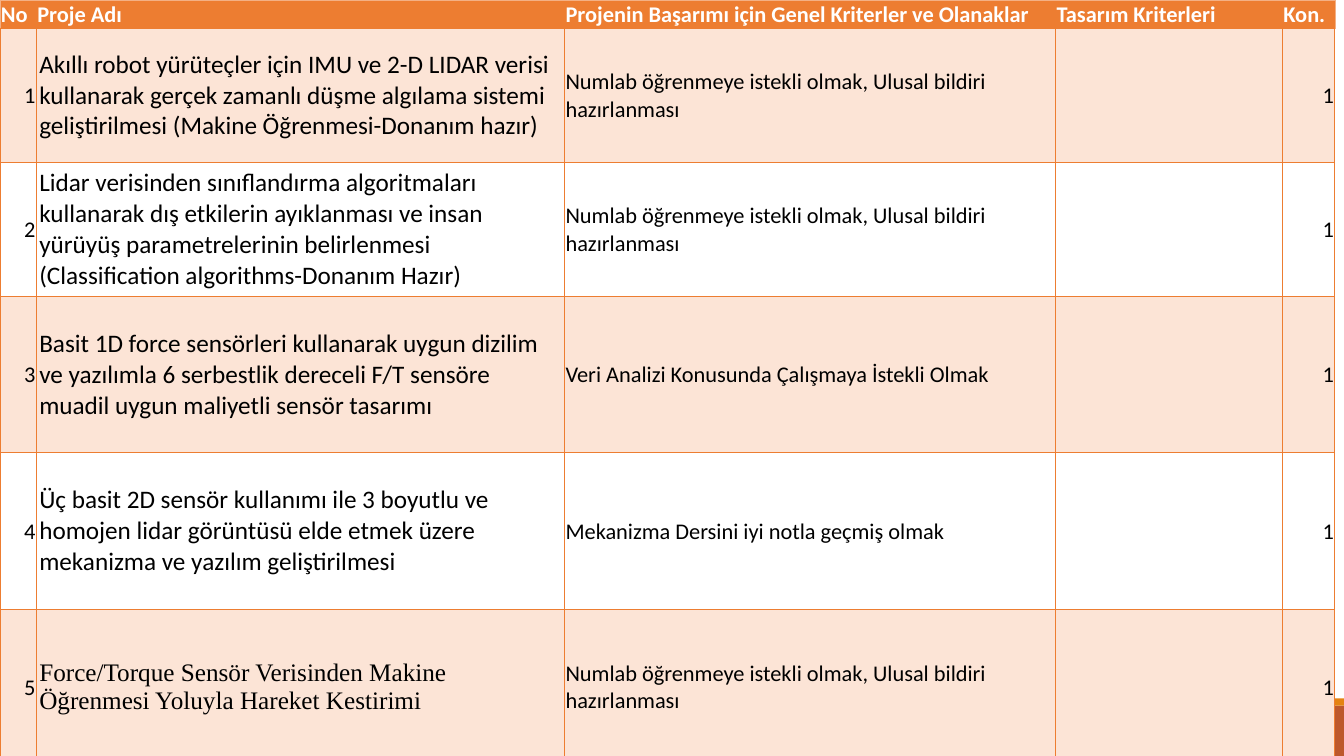
from dataclasses import dataclass

from lxml.etree import SubElement
from pptx import Presentation
from pptx.dml.color import RGBColor as RGB
from pptx.enum.shapes import MSO_SHAPE as SHAPE
from pptx.enum.text import MSO_ANCHOR as ANCHOR, PP_ALIGN as ALIGN
from pptx.oxml.ns import qn
from pptx.util import Inches, Pt


@dataclass(frozen=True)
class Theme:
    header: str = "ED7D31"
    header_edge: str = "F4B084"
    band: str = "FCE4D6"
    footer: str = "BD582C"
    footer_edge: str = "E48312"
    light: str = "FFFFFF"
    dark: str = "000000"
    font: str = "Calibri"
    serif: str = "Times New Roman"
    text_size: float = 16
    name_size: float = 18
    thin: float = 0.5
    thick: float = 1


THEME = Theme()
WIDTH, HEIGHT = 13.33, 7.5
COLUMNS = [0.36, 5.24, 4.87, 2.25, 0.52]
ROWS = [0.2] + [1.33] * 2 + [1.55] * 3
NAME_COL, COUNT_COL = 1, 4
NUMBER_COLS = (0, COUNT_COL)
TIGHT = (0.01, 0.01, 0.01, 0)
ROOMY = (0.03, 0.02, 0.03, 0.02)

HEADINGS = ["No", "Proje Adı", "Projenin Başarımı için Genel Kriterler ve Olanaklar",
            "Tasarım Kriterleri", "Kon."]
SOFTWARE = "Numlab öğrenmeye istekli olmak, Ulusal bildiri hazırlanması"
PROJECTS = [
    ("Akıllı robot yürüteçler için IMU ve 2-D LIDAR verisi kullanarak gerçek zamanlı "
     "düşme algılama sistemi geliştirilmesi (Makine Öğrenmesi-Donanım hazır)", SOFTWARE),
    ("Lidar verisinden sınıflandırma algoritmaları kullanarak dış etkilerin ayıklanması "
     "ve insan yürüyüş parametrelerinin belirlenmesi "
     "(Classification algorithms-Donanım Hazır)", SOFTWARE),
    ("Basit 1D force sensörleri kullanarak uygun dizilim ve yazılımla 6 serbestlik "
     "dereceli F/T sensöre muadil uygun maliyetli sensör tasarımı",
     "Veri Analizi Konusunda Çalışmaya İstekli Olmak"),
    ("Üç basit 2D sensör kullanımı ile 3 boyutlu ve homojen lidar görüntüsü elde etmek "
     "üzere mekanizma ve yazılım geliştirilmesi",
     "Mekanizma Dersini iyi notla geçmiş olmak"),
    ("Force/Torque Sensör Verisinden Makine Öğrenmesi Yoluyla Hareket Kestirimi", SOFTWARE),
]


def set_borders(cell, borders):
    """Draw the four cell edges; an edge given as None stays clear."""
    tcPr = cell._tc.get_or_add_tcPr()
    for side in "LRTB":
        ln = SubElement(tcPr, qn(f"a:ln{side}"))
        if borders[side] is None:
            SubElement(ln, qn("a:noFill"))
            continue
        color, width = borders[side]
        ln.set("w", str(Pt(width)))
        fill = SubElement(ln, qn("a:solidFill"))
        SubElement(fill, qn("a:srgbClr"), val=color)


def cell_borders(row, col):
    """Pale outline around the header, heavier outline around the body."""
    thin, thick = (THEME.header, THEME.thin), (THEME.header, THEME.thick)
    first, last = col == 0, col == len(COLUMNS) - 1
    if row == 0:
        pale = (THEME.header_edge, THEME.thin)
        return {"L": pale if first else None, "R": pale if last else None,
                "T": pale, "B": thick}
    return {"L": thick if first else thin, "R": thick if last else thin,
            "T": thick if row == 1 else thin,
            "B": thick if row == len(ROWS) - 1 else thin}


def fill_cell(cell, row, col, text):
    is_name = row > 0 and col == NAME_COL
    set_borders(cell, cell_borders(row, col))
    if row % 2 or row == 0:
        cell.fill.solid()
        cell.fill.fore_color.rgb = RGB.from_string(THEME.band if row else THEME.header)
    else:
        cell.fill.background()

    cell.vertical_anchor = ANCHOR.MIDDLE if row else ANCHOR.BOTTOM
    (cell.margin_left, cell.margin_top, cell.margin_right,
     cell.margin_bottom) = map(Inches, ROOMY if is_name else TIGHT)
    cell.text = text
    p = cell.text_frame.paragraphs[0]
    if row and col in NUMBER_COLS:
        p.alignment = ALIGN.RIGHT
    p.font.name = THEME.serif if is_name and row == len(PROJECTS) else THEME.font
    p.font.size = Pt(THEME.name_size if is_name else THEME.text_size)
    p.font.bold = row == 0
    p.font.color.rgb = RGB.from_string(THEME.dark if row else THEME.light)


def add_footer(slide, left, top, width, height):
    """Dark bar with a narrow bright strip on its top edge."""
    strip = 0.07
    for y, h, color in ((top + strip, height - strip, THEME.footer),
                        (top, strip, THEME.footer_edge)):
        s = slide.shapes.add_shape(SHAPE.RECTANGLE, *map(Inches, (left, y, width, h)))
        s.shadow.inherit = False
        s.fill.solid()
        s.fill.fore_color.rgb = RGB.from_string(color)
        s.line.fill.background()


def add_project_table(slide, left, top):
    table = slide.shapes.add_table(
        len(ROWS), len(COLUMNS),
        *map(Inches, (left, top, sum(COLUMNS), sum(ROWS)))).table
    table.first_row = table.horz_banding = False
    for column, width in zip(table.columns, COLUMNS):
        column.width = Inches(width)
    for row, height in zip(table.rows, ROWS):
        row.height = Inches(height)

    records = [HEADINGS] + [[str(number), name, criteria, "", "1"]
                            for number, (name, criteria) in enumerate(PROJECTS, 1)]
    for r, record in enumerate(records):
        for c, text in enumerate(record):
            fill_cell(table.cell(r, c), r, c, text)


def main():
    prs = Presentation()
    prs.slide_width, prs.slide_height = Inches(WIDTH), Inches(HEIGHT)
    slide = prs.slides.add_slide(prs.slide_layouts[6])
    add_footer(slide, 0, 6.93, WIDTH, HEIGHT - 6.93)
    add_project_table(slide, 0, 0)
    prs.save("out.pptx")


if __name__ == "__main__":
    main()
